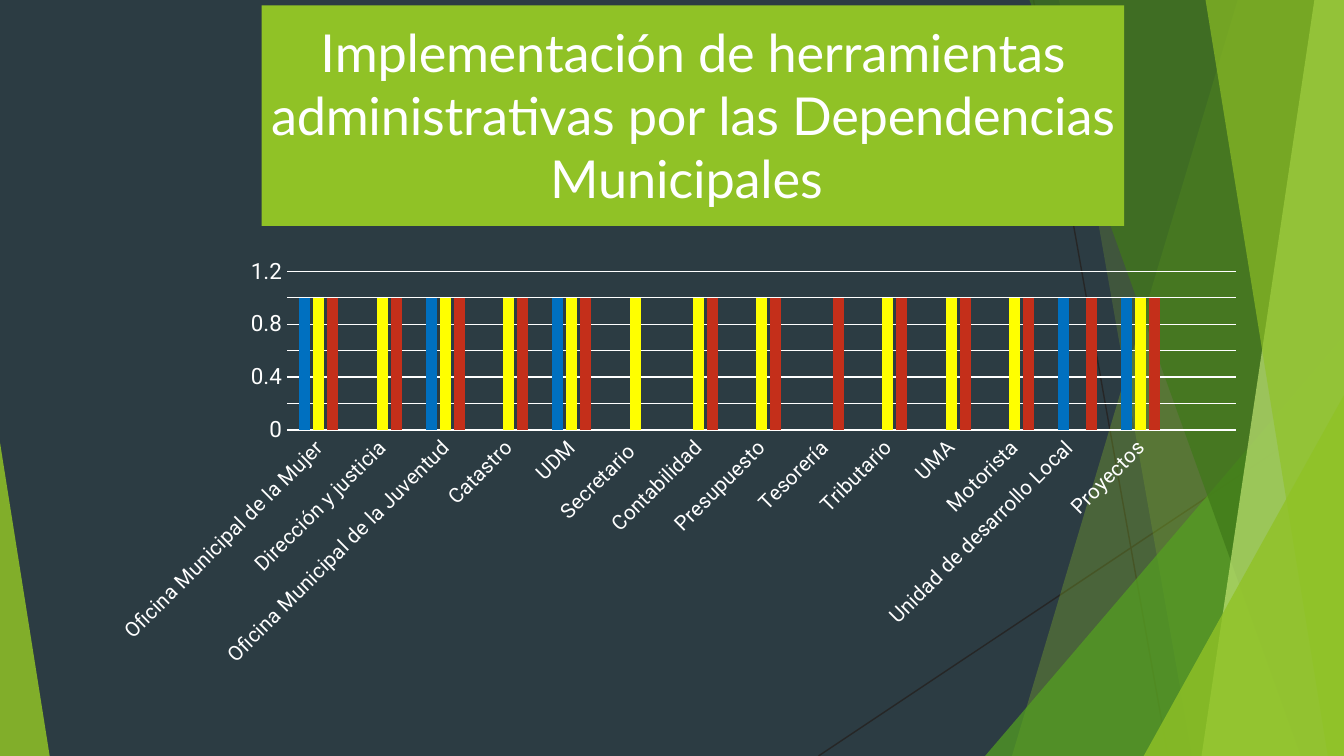
from lxml.etree import SubElement
from pptx import Presentation
from pptx.chart.data import CategoryChartData
from pptx.dml.color import RGBColor
from pptx.enum.chart import XL_CHART_TYPE, XL_LEGEND_POSITION, XL_TICK_MARK
from pptx.enum.shapes import MSO_CONNECTOR, MSO_SHAPE
from pptx.enum.text import PP_ALIGN
from pptx.oxml import parse_xml
from pptx.oxml.ns import nsdecls, qn
from pptx.util import Inches, Pt

# Content
TITLE = ("Implementación de herramientas administrativas "
         "por las Dependencias Municipales ")
# Office, then planning, diary and report (1 = in use)
ROWS = [
    ("Oficina Municipal de la Mujer", 1, 1, 1),
    ("Dirección y justicia", None, 1, 1),
    ("Oficina Municipal de la Juventud", 1, 1, 1),
    ("Catastro", None, 1, 1),
    ("UDM", 1, 1, 1),
    ("Secretario ", None, 1, None),
    ("Contabilidad", None, 1, 1),
    ("Presupuesto", None, 1, 1),
    ("Tesorería", None, None, 1),
    ("Tributario", None, 1, 1),
    ("UMA", None, 1, 1),
    ("Motorista", None, 1, 1),
    ("Unidad de desarrollo Local\n", 1, None, 1),
    ("Proyectos", 1, 1, 1),
]
SERIES = [("Planificación\n", "blue"), ("Diario", "yellow"), ("Informe", "red")]
COLORS = {
    "back": "2C3C43", "white": "FFFFFF", "line": "262626",
    "lime": "90C226", "green": "54A021", "dark": "3F7819", "pale": "C0E474",
    "blue": "0070C0", "yellow": "FFFF00", "red": "C42F1A",
}
W = 10
H = W * 9 / 16

# Decoration, back to front
LINES = [((7.69, 0), (8.69, H)), ((W, 3.02), (6.09, H))]
# Bands reach the right edge: top left x, bottom left x, colour, opacity
# Triangles: left, top, width, apex (0 left, 1 right), colour, opacity
DECOR = [
    ("band", (9.21, 7.53), "lime", 30),
    ("band", (7.88, 8.87), "lime", 20),
    ("peak", (7.33, 2.5, 2.67, 1), "green", 72),
    ("band", (7.66, 9.68), "dark", 70),
    ("band", (9.78, 8.94), "pale", 70),
    ("band", (8.97, 9.88), "lime", 65),
    ("peak", (8.51, 2.94, 1.49, 1), "lime", 80),
    ("peak", (0, 3.29, 0.37, 0), "lime", 85),
]

# Chart frame and its parts: left, top, width, height on the slide
FRAME = (0.71, 0, 8.65, H)
PLOT = (2.14, 2.02, 7.06, 1.18)
HEAD = (1.95, 0.04)
KEY = (3.3, 4.92, 3.35, 0.35)


def rgb(name):
    return RGBColor.from_string(COLORS[name])


def paint(fill, name, alpha=100):
    fill.solid()
    fill.fore_color.rgb = rgb(name)
    if alpha < 100:
        tint = fill._xPr.find(".//" + qn("a:srgbClr"))
        SubElement(tint, qn("a:alpha"), val=str(alpha * 1000))


def style(font, size, face="Roboto"):
    for key, val in {"size": Pt(size), "name": face, "bold": False}.items():
        setattr(font, key, val)
    font.color.rgb = rgb("white")


def stroke(line, name):
    line.color.rgb = rgb(name)
    line.width = Pt(0.75)


def place(part, index, box, inner=False):
    """Fix a chart part at a place given in slide inches."""
    for old in part.findall(qn("c:layout")):
        part.remove(old)
    left, top, wide, high = FRAME
    vals = [(box[0] - left) / wide, (box[1] - top) / high]
    if len(box) == 4:
        vals += [box[2] / wide, box[3] / high]
    tags = '<c:layoutTarget val="inner"/>' if inner else ""
    tags += '<c:xMode val="edge"/><c:yMode val="edge"/>'
    tags += "".join(f'<c:{k} val="{v:.3f}"/>' for k, v in zip("xywh", vals))
    part.insert(index, parse_xml(
        f'<c:layout {nsdecls("c")}><c:manualLayout>{tags}'
        "</c:manualLayout></c:layout>"))


deck = Presentation()
deck.slide_width, deck.slide_height = Inches(W), Inches(H)
slide = deck.slides.add_slide(deck.slide_layouts[6])
paint(slide.background.fill, "back")
shapes = slide.shapes

# Thin lines
for start, end in LINES:
    line = shapes.add_connector(
        MSO_CONNECTOR.STRAIGHT, *map(Inches, start + end))
    stroke(line.line, "line")
    SubElement(line._element.spPr, qn("a:effectLst"))

# Bands and triangles
for kind, spot, color, alpha in DECOR:
    if kind == "band":
        high, low = spot
        pen = shapes.build_freeform(Inches(high), 0)
        pen.add_line_segments(
            [(Inches(x), Inches(y)) for x, y in [(W, 0), (W, H), (low, H)]])
        item = pen.convert_to_shape()
    else:
        left, top, wide, apex = spot
        item = shapes.add_shape(
            MSO_SHAPE.ISOSCELES_TRIANGLE,
            *map(Inches, (left, top, wide, H - top)))
        item.adjustments[0] = apex
    paint(item.fill, color, alpha)
    item.line.fill.background()
    item.shadow.inherit = False

# Chart, with one empty slot after the last office
names, *cols = zip(*ROWS)
data = CategoryChartData()
data.categories = names
for (name, _), vals in zip(SERIES, cols):
    data.add_series(name, vals + (None,))
chart = shapes.add_chart(
    XL_CHART_TYPE.COLUMN_CLUSTERED, *map(Inches, FRAME), data).chart
style(chart.font, 10)
plot = chart.plots[0]
plot.gap_width, plot.overlap, plot.vary_by_categories = 219, -27, False
for bars, (_, color) in zip(plot.series, SERIES):
    paint(bars.format.fill, color)
place(chart._chartSpace.chart.plotArea, 0, PLOT, inner=True)

# Axes
cat, val = chart.category_axis, chart.value_axis
for axis, size in [(cat, 11), (val, 12)]:
    axis.major_tick_mark = axis.minor_tick_mark = XL_TICK_MARK.NONE
    style(axis.tick_labels.font, size)
cat._element.find(".//" + qn("a:bodyPr")).set("rot", "-2700000")
stroke(cat.format.line, "white")
val.format.line.fill.background()
for key, num in {"minimum_scale": 0, "maximum_scale": 1.2,
                 "major_unit": 0.2}.items():
    setattr(val, key, num)
stroke(val.major_gridlines.format.line, "white")

# Chart title
chart.has_title = True
title = chart.chart_title
para = title.text_frame.paragraphs[0]
para.alignment = PP_ALIGN.CENTER
run = para.add_run()
run.text = TITLE
style(run.font, 28, "Lato")
paint(title.format.fill, "lime")
title.include_in_layout = False
place(title._element, 1, HEAD)

# Legend
chart.has_legend = True
key = chart.legend
key.position = XL_LEGEND_POSITION.BOTTOM
key.include_in_layout = False
style(key.font, 12)
place(key._element, 1, KEY)

deck.save("out.pptx")
